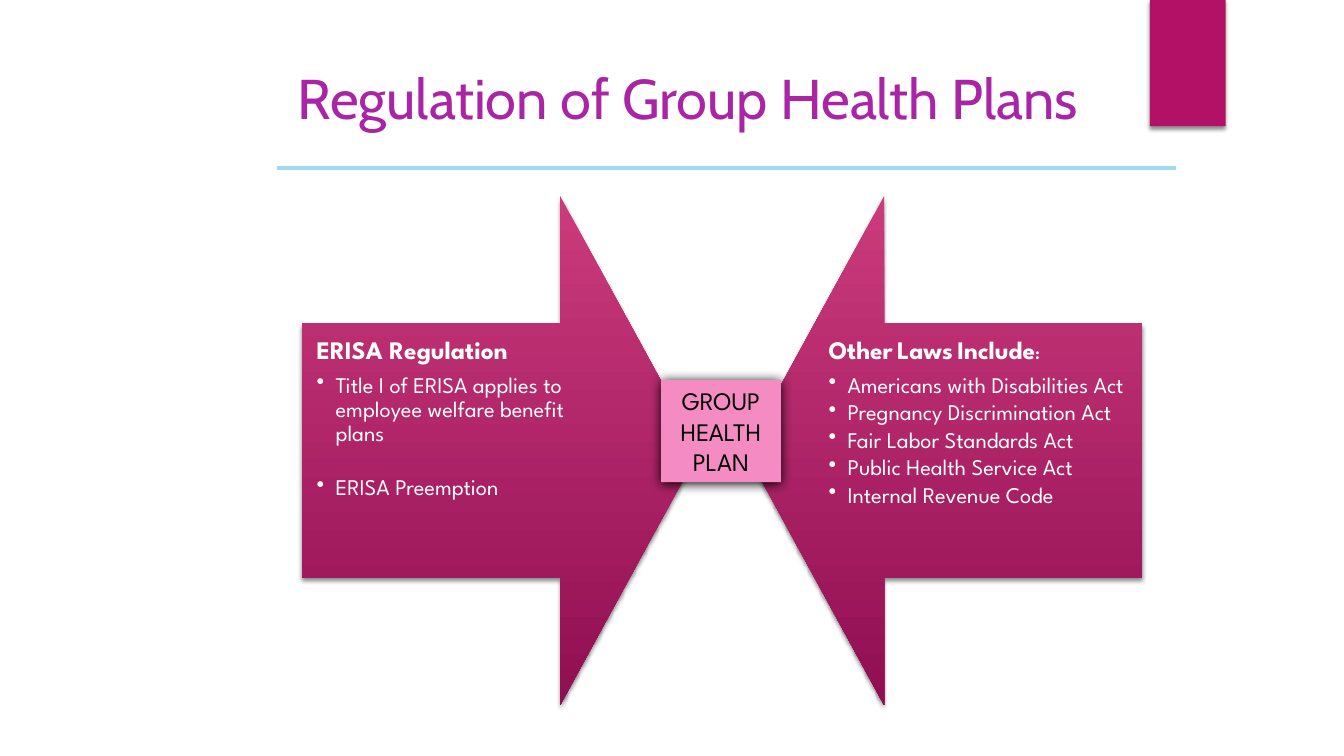
from lxml.etree import SubElement
from pptx import Presentation
from pptx.dml.color import RGBColor
from pptx.enum.shapes import MSO_CONNECTOR, MSO_SHAPE
from pptx.enum.text import MSO_ANCHOR, MSO_AUTO_SIZE, PP_ALIGN
from pptx.oxml.ns import qn
from pptx.util import Cm, Pt

MAGENTA = RGBColor(0xB3, 0x11, 0x66)
PURPLE = RGBColor(0xA9, 0x25, 0xA5)
SKY = RGBColor(0xA0, 0xD9, 0xF2)
ARROW_TOP = RGBColor(0xCB, 0x3B, 0x7C)
ARROW_BOTTOM = RGBColor(0x90, 0x0E, 0x52)
PINK = RGBColor(0xF4, 0x8C, 0xC3)
WHITE = RGBColor(0xFF, 0xFF, 0xFF)
BLACK = RGBColor(0, 0, 0)
BODY_FONT = "League Spartan"


def add_shadow(shape, blur, distance, opacity):
    """Give the shape a black shadow that falls straight down."""
    shape.shadow.inherit = False
    effects = shape._element.spPr.find(qn("a:effectLst"))
    shadow = SubElement(effects, qn("a:outerShdw"), blurRad=str(Pt(blur)),
                        dist=str(Pt(distance)), dir="5400000", rotWithShape="0")
    color = SubElement(shadow, qn("a:srgbClr"), val="000000")
    SubElement(color, qn("a:alpha"), val=str(opacity * 1000))


def add_run(paragraph, text, size, color, bold=False, font=BODY_FONT):
    run = paragraph.add_run()
    run.text = text
    run.font.name = font
    run.font.size = Pt(size)
    run.font.bold = bold
    run.font.color.rgb = color


presentation = Presentation()
presentation.slide_width = Cm(33.87)
presentation.slide_height = Cm(19.05)
slide = presentation.slides.add_slide(presentation.slide_layouts[5])
shapes = slide.shapes

# Corner tab
tab = shapes.add_shape(MSO_SHAPE.RECTANGLE, Cm(28.98), Cm(0), Cm(1.91), Cm(3.18))
tab.fill.solid()
tab.fill.fore_color.rgb = MAGENTA
tab.line.fill.background()
add_shadow(tab, 3, 2, 45)

# Title and rule below it
title = shapes.title
title.left, title.top, title.width, title.height = Cm(7.24), Cm(1.47), Cm(21.34), Cm(3.18)
title.text_frame.vertical_anchor = MSO_ANCHOR.TOP
title.text_frame.auto_size = MSO_AUTO_SIZE.NONE
heading = title.text_frame.paragraphs[0]
heading.alignment = PP_ALIGN.LEFT
add_run(heading, "Regulation of Group Health Plans", 40, PURPLE, font="Cabin")

rule = shapes.add_connector(MSO_CONNECTOR.STRAIGHT, Cm(6.99), Cm(4.24), Cm(29.64), Cm(4.24))
rule.line.color.rgb = SKY
rule.line.width = Pt(3)
SubElement(rule._element.spPr, qn("a:effectLst"))

# Facing arrows: preset, arrow left, text left, heading runs, (item, space before)
sides = [
    (MSO_SHAPE.RIGHT_ARROW, 7.61, 7.62,
     [("ERISA Regulation", 18)],
     [("Title I of ERISA applies to employee welfare benefit plans", 0),
      ("ERISA Preemption", 19)]),
    (MSO_SHAPE.LEFT_ARROW, 18.78, 20.52,
     [("Other", 18), (" ", 12), ("Laws", 18), (" ", 12), ("Include", 18), (":", 12)],
     [("Americans with Disabilities Act", 0),
      ("Pregnancy Discrimination Act", 0),
      ("Fair Labor Standards Act", 0),
      ("Public Health Service Act", 0),
      ("Internal Revenue Code", 0)]),
]
for preset, arrow_left, text_left, heading_runs, items in sides:
    arrow = shapes.add_shape(preset, Cm(arrow_left), Cm(4.94), Cm(10.01), Cm(12.83))
    arrow.adjustments[0] = 0.5
    arrow.adjustments[1] = 0.35
    arrow.fill.gradient()
    arrow.fill.gradient_angle = 270
    for stop, color in zip(arrow.fill.gradient_stops, (ARROW_TOP, ARROW_BOTTOM)):
        stop.color.rgb = color
    arrow.line.fill.background()
    add_shadow(arrow, 3, 2, 45)

    laws = shapes.add_textbox(Cm(text_left), Cm(8.15), Cm(8.26), Cm(6.4)).text_frame
    laws.word_wrap = True
    laws.margin_left = laws.margin_right = laws.margin_top = laws.margin_bottom = Cm(0.36)
    side_heading = laws.paragraphs[0]
    side_heading.line_spacing = 0.9
    side_heading.space_after = Pt(6.3)
    for text, size in heading_runs:
        add_run(side_heading, text, size, WHITE, bold=True)
    for text, space_before in items:
        item = laws.add_paragraph()
        item.level = 1
        item.line_spacing = 0.9
        item.space_before = Pt(space_before)
        item.space_after = Pt(2.4)
        properties = item._p.get_or_add_pPr()
        properties.set("marL", str(Cm(0.48)))
        properties.set("indent", str(-Cm(0.48)))
        SubElement(properties, qn("a:buChar"), char="•")
        add_run(item, text, 16, WHITE)

# Group health plan in the middle
plan = shapes.add_shape(MSO_SHAPE.RECTANGLE, Cm(16.66), Cm(9.58), Cm(3.02), Cm(2.57))
plan.fill.solid()
plan.fill.fore_color.rgb = PINK
plan.line.fill.background()
add_shadow(plan, 8.5, 1, 100)
plan.text_frame.word_wrap = True
plan.text_frame.auto_size = MSO_AUTO_SIZE.SHAPE_TO_FIT_TEXT
plan.text_frame.vertical_anchor = MSO_ANCHOR.MIDDLE
plan_label = plan.text_frame.paragraphs[0]
plan_label.alignment = PP_ALIGN.CENTER
add_run(plan_label, "GROUP HEALTH PLAN", 18, BLACK)

presentation.save("out.pptx")
